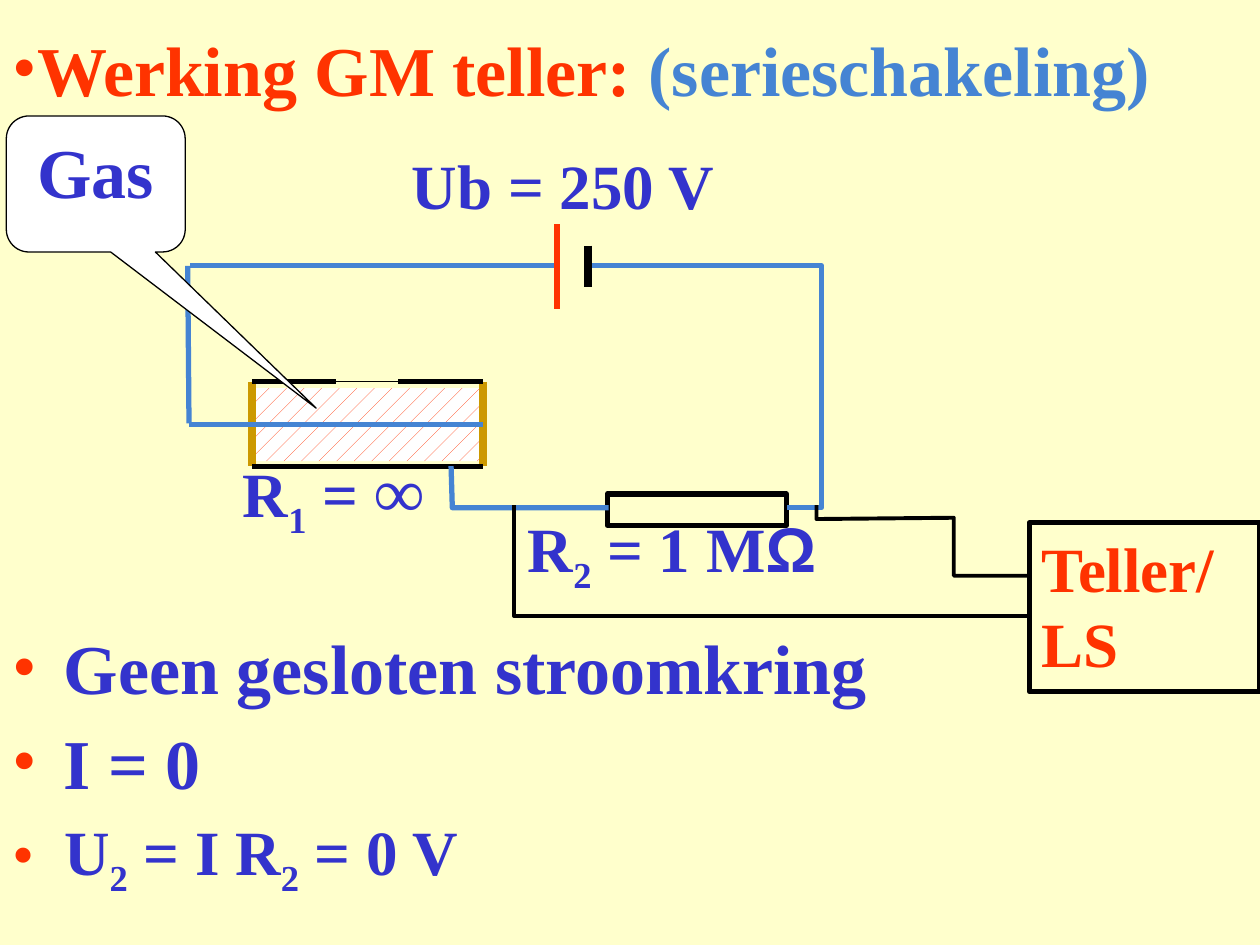
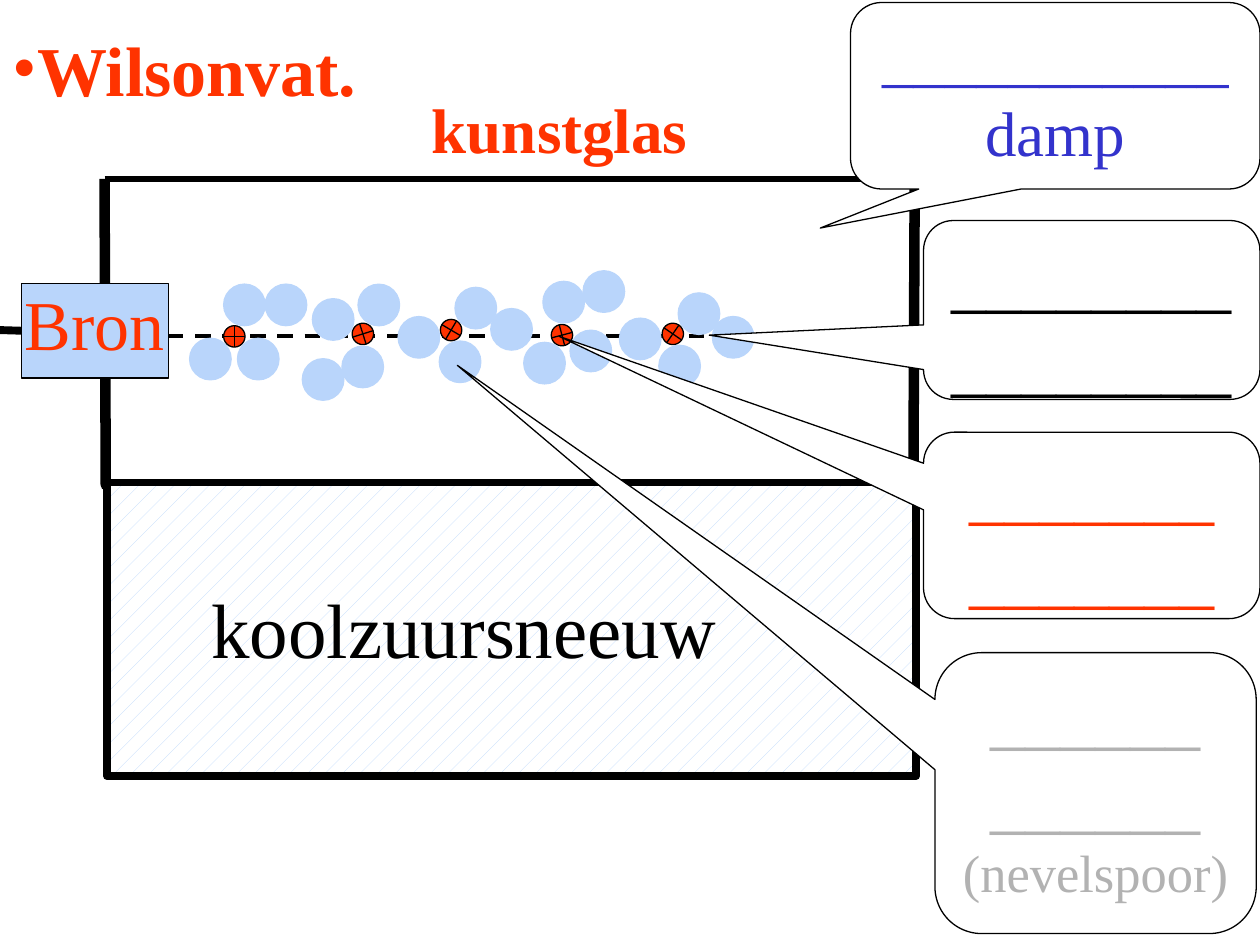
from dataclasses import dataclass
from math import cos, radians, sin
from typing import Any, NamedTuple, Optional

from lxml.etree import SubElement
from pptx import Presentation
from pptx.dml.color import RGBColor
from pptx.enum.dml import MSO_LINE, MSO_PATTERN
from pptx.enum.shapes import MSO_CONNECTOR, MSO_SHAPE
from pptx.enum.text import MSO_ANCHOR, MSO_AUTO_SIZE, PP_ALIGN
from pptx.oxml.ns import qn
from pptx.util import Inches, Pt


@dataclass(frozen=True)
class Theme:
    font: str = "Times New Roman"
    symbol_font: str = "Arial"
    red: str = "FF3300"
    blue: str = "3333CC"
    wire: str = "4584D3"
    mist: str = "B9D5FB"
    brass: str = "CC9900"
    gray: str = "B2B2B2"
    black: str = "000000"
    white: str = "FFFFFF"
    cream: str = "FFFFCC"
    huge: int = 44
    large: int = 40
    medium: int = 36
    small: int = 30
    hairline: float = 0.75
    thin: float = 2.25
    normal: float = 3
    thick: float = 4.5
    heavy: float = 6


THEME = Theme()


class Box(NamedTuple):
    left: float
    top: float
    width: float
    height: float


class Point(NamedTuple):
    x: float
    y: float


class Stroke(NamedTuple):
    color: str
    width: float


class Pattern(NamedTuple):
    front: str
    back: str


@dataclass(frozen=True)
class Span:
    text: str
    size: int = THEME.large
    color: str = THEME.blue
    bold: bool = True
    subscript: bool = False
    font: str = THEME.font


@dataclass(frozen=True)
class Callout:
    box: Box
    tip: Point
    lines: list[Span]


@dataclass(frozen=True)
class Particle:
    center: Point
    rotation: float


OUTLINE = Stroke(THEME.black, THEME.hairline)
FRAME = Stroke(THEME.black, THEME.normal)
WIRE = Stroke(THEME.wire, THEME.normal)
SIGNAL = Stroke(THEME.black, THEME.thin)


# Formatting helpers
def apply(target: Any, values: dict[str, Any]) -> None:
    for name, value in values.items():
        setattr(target, name, value)


def emu(values: tuple) -> list[int]:
    return [Inches(value) for value in values]


def draw_stroke(line: Any, stroke: Optional[Stroke]) -> None:
    if stroke is None:
        line.fill.background()
        return
    line.color.rgb = RGBColor.from_string(stroke.color)
    line.width = Pt(stroke.width)


def draw_fill(fill: Any, paint: Any) -> None:
    if paint is None:
        fill.background()
    elif isinstance(paint, Pattern):
        fill.patterned()
        fill.pattern = MSO_PATTERN.PERCENT_5
        fill.fore_color.rgb = RGBColor.from_string(paint.front)
        fill.back_color.rgb = RGBColor.from_string(paint.back)
    else:
        fill.solid()
        fill.fore_color.rgb = RGBColor.from_string(paint)


def add_bullet(para: Any, indent: float) -> None:
    props = para._p.get_or_add_pPr()
    props.set("marL", str(Inches(indent)))
    props.set("indent", str(-Inches(indent)))
    color = SubElement(props, qn("a:buClr"))
    SubElement(color, qn("a:srgbClr"), val=THEME.red)
    SubElement(props, qn("a:buFont"), typeface=THEME.font)
    SubElement(props, qn("a:buChar"), char="•")


def write(shape: Any, paras: list[list[Span]], anchor: Any = MSO_ANCHOR.TOP,
          align: Any = PP_ALIGN.LEFT, bullet_indent: Optional[float] = None) -> None:
    frame = shape.text_frame
    apply(frame, {"word_wrap": True, "auto_size": MSO_AUTO_SIZE.NONE,
                  "vertical_anchor": anchor})
    for index, spans in enumerate(paras):
        para = frame.add_paragraph() if index else frame.paragraphs[0]
        para.alignment = align
        if bullet_indent is not None:
            add_bullet(para, bullet_indent)
        for span in spans:
            run = para.add_run()
            run.text = span.text
            apply(run.font, {"name": span.font, "size": Pt(span.size), "bold": span.bold})
            run.font.color.rgb = RGBColor.from_string(span.color)
            if span.subscript:
                run._r.get_or_add_rPr().set("baseline", "-25000")


# Drawing helpers
def add_page(deck: Any, background: str, title: list[Span]) -> Any:
    page = deck.slides.add_slide(deck.slide_layouts[5])
    draw_fill(page.background.fill, background)
    heading = page.shapes.title
    apply(heading, dict(zip(("left", "top", "width", "height"), emu((0, 0, 10, 1.08)))))
    write(heading, [title], MSO_ANCHOR.MIDDLE, bullet_indent=0)
    return page


def add_label(page: Any, box: Box, spans: list[Span], **style: Any) -> None:
    write(page.shapes.add_textbox(*emu(box)), [spans], **style)


def add_figure(page: Any, kind: Any, box: Box, paint: Any, stroke: Optional[Stroke]) -> Any:
    shape = page.shapes.add_shape(kind, *emu(box))
    shape.shadow.inherit = False
    draw_fill(shape.fill, paint)
    draw_stroke(shape.line, stroke)
    return shape


def add_line(page: Any, start: Point, end: Point, stroke: Stroke) -> Any:
    line = page.shapes.add_connector(MSO_CONNECTOR.STRAIGHT, *emu(start), *emu(end))
    draw_stroke(line.line, stroke)
    SubElement(line._element.spPr, qn("a:effectLst"))
    return line


def add_polyline(page: Any, points: list[Point], stroke: Stroke) -> None:
    builder = page.shapes.build_freeform(*emu(points[0]))
    builder.add_line_segments([emu(point) for point in points[1:]], close=False)
    shape = builder.convert_to_shape()
    shape.shadow.inherit = False
    draw_fill(shape.fill, None)
    draw_stroke(shape.line, stroke)


def add_callout(page: Any, callout: Callout) -> None:
    box, tip = callout.box, callout.tip
    shape = add_figure(page, MSO_SHAPE.ROUNDED_RECTANGULAR_CALLOUT, box, THEME.white, OUTLINE)
    shape.adjustments[0] = (tip.x - box.left) / box.width - 0.5
    shape.adjustments[1] = (tip.y - box.top) / box.height - 0.5
    write(shape, [[line] for line in callout.lines], align=PP_ALIGN.CENTER)


def add_circle(page: Any, kind: Any, center: Point, size: float, paint: str, stroke: Stroke) -> Any:
    box = Box(center.x - size / 2, center.y - size / 2, size, size)
    return add_figure(page, kind, box, paint, stroke)


# Geiger counter circuit
def build_counter(deck: Any) -> None:
    page = add_page(deck, THEME.cream, [Span("Werking GM teller: ", color=THEME.red),
                                        Span("(serieschakeling)", color=THEME.wire)])
    middle = {"anchor": MSO_ANCHOR.MIDDLE}
    bulleted = {**middle, "bullet_indent": 0.41}
    add_label(page, Box(0, 4.75, 7.5, 1.08), [Span("Geen gesloten stroomkring")], **bulleted)

    # Gas tube
    tube = add_figure(page, MSO_SHAPE.RECTANGLE, Box(2, 3.08, 1.83, 0.58),
                      Pattern(THEME.red, THEME.white), None)
    left, right, top, bottom = 2, 3.83, 3.03, 3.7
    for x in (left, right):
        add_line(page, Point(x, top), Point(x, bottom), Stroke(THEME.brass, THEME.thick))
    for start, end, y, stroke in ((left, right, bottom, FRAME), (left, 2.67, top, FRAME),
                                  (3.16, right, top, FRAME), (2.67, 3.17, top, OUTLINE)):
        add_line(page, Point(start, y), Point(end, y), stroke)

    # Resistor, wires and battery
    add_figure(page, MSO_SHAPE.RECTANGLE, Box(4.82, 3.92, 1.42, 0.25), None, FRAME)
    anode = add_line(page, Point(right, 3.37), Point(1.5, 3.37), WIRE)
    anode.begin_connect(tube, 3)
    add_line(page, Point(1.5, 3.36), Point(1.49, 2.11), WIRE)
    add_polyline(page, [Point(3.58, 3.7), Point(3.59, 4.03), Point(4.83, 4.03)], WIRE)
    add_polyline(page, [Point(6.25, 4.03), Point(6.52, 4.03), Point(6.52, 2.11),
                        Point(4.65, 2.11)], WIRE)
    add_line(page, Point(1.51, 2.11), Point(4.43, 2.11), WIRE)
    add_line(page, Point(4.42, 1.78), Point(4.42, 2.45), Stroke(THEME.red, THEME.normal))
    add_line(page, Point(4.67, 1.95), Point(4.67, 2.28), Stroke(THEME.black, THEME.thick))

    # Values and conclusions
    size = THEME.medium
    two = Span("2", size, subscript=True)
    add_label(page, Box(3.17, 1, 2.92, 0.92), [Span("Ub = 250 V", size)], **middle)
    add_label(page, Box(4.09, 3.85, 2.92, 1.07),
              [Span("R", size), two, Span(" = 1 M", size),
               Span("Ω", size, font=THEME.symbol_font)], **middle)
    add_label(page, Box(1.83, 3.42, 1.92, 1),
              [Span("R", size), Span("1", size, subscript=True), Span(" = ", size), Span("∞")],
              **middle)
    add_label(page, Box(0, 5.58, 2.67, 0.92), [Span("I = 0")], **bulleted)
    add_label(page, Box(0, 6.08, 4.58, 1.42),
              [Span("U", size), two, Span(" = I R", size), two, Span(" = 0 V", size)], **bulleted)
    add_callout(page, Callout(Box(0.05, 0.92, 1.42, 1.08), Point(2.51, 3.24), [Span("Gas")]))

    # Pulse counter
    add_polyline(page, [Point(4.08, 4.01), Point(4.08, 4.89), Point(8.16, 4.89)], SIGNAL)
    add_polyline(page, [Point(6.48, 4.01), Point(6.48, 4.12), Point(7.57, 4.11),
                        Point(7.57, 4.57), Point(8.16, 4.57)], SIGNAL)
    counter = add_figure(page, MSO_SHAPE.RECTANGLE, Box(8.17, 4.15, 1.83, 1.34), None, FRAME)
    write(counter, [[Span("Teller/LS", size, THEME.red)]])


# Cloud chamber
PARTICLES = [Particle(Point(1.86, 2.67), 0), Particle(Point(2.88, 2.65), 162.4),
             Particle(Point(4.46, 2.66), 345.3), Particle(Point(3.58, 2.62), 30.7),
             Particle(Point(5.34, 2.65), 34.6)]
DROPLET_OFFSETS = [Point(-0.19, 0.18), Point(0.19, 0.18), Point(0.41, -0.25), Point(0.08, -0.25)]


def blank(count: int, color: str, size: int = THEME.large) -> Span:
    return Span("_" * count, size, color, False)


CALLOUTS = [
    Callout(Box(6.75, 0.02, 3.25, 1.48), Point(6.51, 1.81),
            [blank(11, THEME.blue, THEME.medium), Span("damp", THEME.medium, bold=False)]),
    Callout(Box(7.33, 3.43, 2.67, 1.48), Point(4.44, 2.67), [blank(7, THEME.red)] * 2),
    Callout(Box(7.42, 5.18, 2.55, 2.23), Point(3.63, 2.9),
            [blank(6, THEME.gray)] * 2 + [Span("(nevelspoor)", THEME.small, THEME.gray, False)]),
    Callout(Box(7.33, 1.75, 2.67, 1.42), Point(5.63, 2.66), [blank(16, THEME.black)]),
]


def build_cloud_chamber(deck: Any) -> None:
    page = add_page(deck, THEME.white, [Span("Wilsonvat.", color=THEME.red)])

    # Vessel and cooling
    add_polyline(page, [Point(0.83, 1.42), Point(0.84, 3.85), Point(7.25, 3.85),
                        Point(7.26, 1.43)], Stroke(THEME.black, THEME.heavy))
    add_line(page, Point(0.83, 1.42), Point(7.25, 1.42), FRAME)
    add_figure(page, MSO_SHAPE.RECTANGLE, Box(0.85, 3.83, 6.42, 2.33),
               Pattern(THEME.mist, THEME.white), Stroke(THEME.black, THEME.thick))
    add_label(page, Box(1.58, 4.57, 4.58, 0.83),
              [Span("koolzuursneeuw", THEME.huge, THEME.black, False)])

    # Track with ions, each surrounded by a rotated cluster of droplets
    track = add_line(page, Point(1.33, 2.67), Point(6, 2.67), SIGNAL)
    track.line.dash_style = MSO_LINE.DASH
    SubElement(track.line._get_or_add_ln(), qn("a:tailEnd"), type="triangle")
    for particle in PARTICLES:
        ion = add_circle(page, MSO_SHAPE.FLOWCHART_OR, particle.center, 0.17, THEME.red, OUTLINE)
        ion.rotation = particle.rotation
    for particle in PARTICLES:
        angle = radians(particle.rotation)
        for offset in DROPLET_OFFSETS:
            center = Point(particle.center.x + offset.x * cos(angle) - offset.y * sin(angle),
                           particle.center.y + offset.x * sin(angle) + offset.y * cos(angle))
            add_circle(page, MSO_SHAPE.OVAL, center, 0.33, THEME.mist,
                       Stroke(THEME.mist, THEME.hairline))
    for callout in CALLOUTS:
        add_callout(page, callout)

    # Source and lid label
    source = add_figure(page, MSO_SHAPE.RECTANGLE, Box(0.17, 2.25, 1.17, 0.75),
                        THEME.mist, OUTLINE)
    holder = add_line(page, Point(0.17, 2.62), Point(0, 2.62), Stroke(THEME.black, THEME.thick))
    holder.begin_connect(source, 1)
    add_label(page, Box(0.1, 2.18, 1.33, 0.77), [Span("Bron", color=THEME.red, bold=False)])
    add_label(page, Box(3.33, 0.67, 2.33, 0.7), [Span("kunstglas", THEME.medium, THEME.red)])


def main() -> None:
    deck = Presentation()
    apply(deck, {"slide_width": Inches(10), "slide_height": Inches(7.5)})
    build_counter(deck)
    build_cloud_chamber(deck)
    deck.save("out.pptx")


if __name__ == "__main__":
    main()
